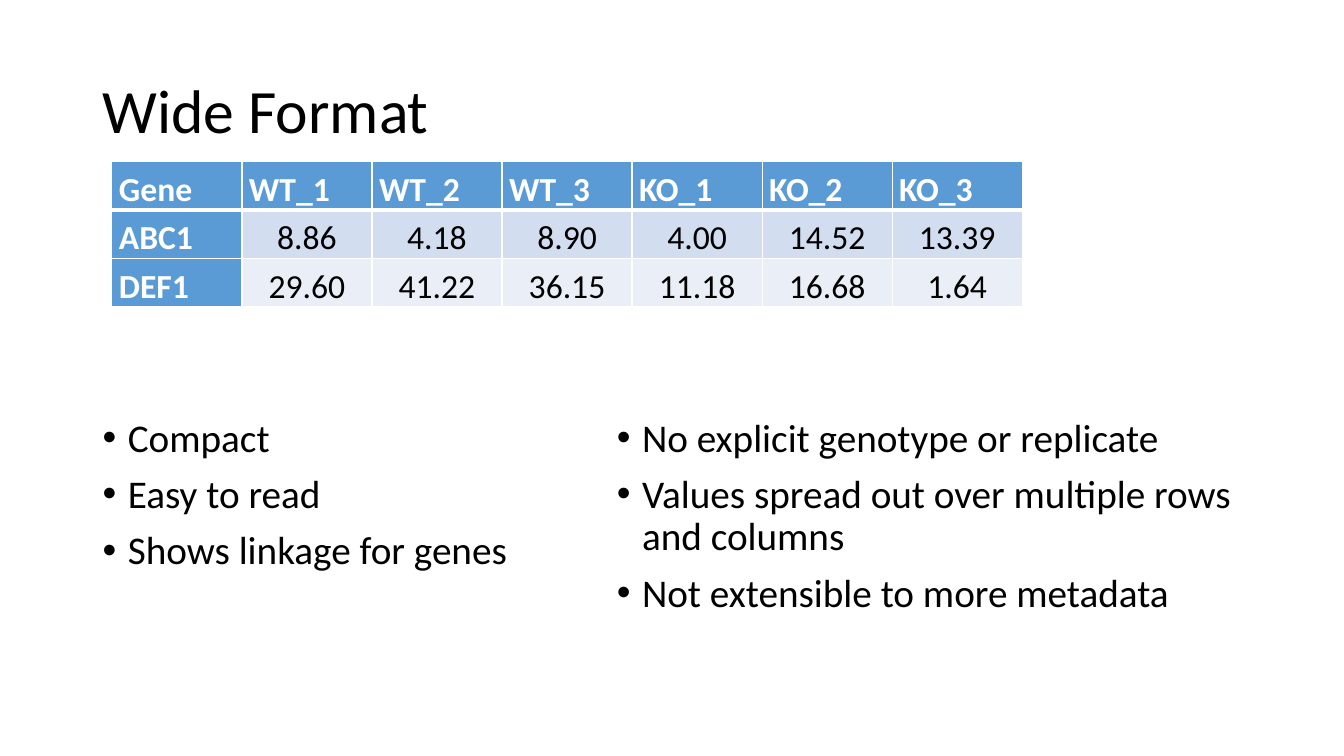
from lxml import etree
from pptx import Presentation
from pptx.dml.color import RGBColor
from pptx.enum.text import MSO_ANCHOR, PP_ALIGN
from pptx.oxml.ns import qn
from pptx.util import Inches, Pt

LEFT, CENTER = PP_ALIGN.LEFT, PP_ALIGN.CENTER
TOP, MIDDLE, BOTTOM = MSO_ANCHOR.TOP, MSO_ANCHOR.MIDDLE, MSO_ANCHOR.BOTTOM

FONT = "Calibri"
BLACK, WHITE = "000000", "FFFFFF"
HEADER_FILL = "5B9BD5"
BAND_FILLS = ["D2DEEF", "EAEFF7"]

EXPRESSION = [
    ["Gene", "WT_1", "WT_2", "WT_3", "KO_1", "KO_2", "KO_3"],
    ["ABC1", "8.86", "4.18", "8.90", "4.00", "14.52", "13.39"],
    ["DEF1", "29.60", "41.22", "36.15", "11.18", "16.68", "1.64"],
]
PROS = ["Compact", "Easy to read", "Shows linkage for genes"]
CONS = [
    "No explicit genotype or replicate",
    "Values spread out over multiple rows and columns",
    "Not extensible to more metadata",
]


def rgb(color):
    return RGBColor.from_string(color)


def set_attrs(obj, values):
    for name, value in values.items():
        setattr(obj, name, value)


def write_paragraph(p, text, size, color=BLACK, bold=False, **layout):
    set_attrs(p, layout)
    r = p.add_run()
    r.text = text
    set_attrs(r.font, {"name": FONT, "size": Pt(size), "bold": bold})
    r.font.color.rgb = rgb(color)


def add_bullet(p):
    pPr = p._p.get_or_add_pPr()
    pPr.set("marL", str(Inches(0.25)))
    pPr.set("indent", str(-Inches(0.25)))
    etree.SubElement(pPr, qn("a:buFont"), typeface="Arial")
    etree.SubElement(pPr, qn("a:buChar"), char="•")


def add_text(s, box, lines, size, anchor=TOP, bullets=False):
    tf = s.shapes.add_textbox(*map(Inches, box)).text_frame
    set_attrs(tf, {"word_wrap": True, "vertical_anchor": anchor})
    for i, line in enumerate(lines):
        p = tf.add_paragraph() if i else tf.paragraphs[0]
        space = Pt(10 if bullets else 0)
        write_paragraph(p, line, size, line_spacing=0.9, space_before=space)
        if bullets:
            add_bullet(p)


def set_borders(cell, widths):
    """Draw white cell edges; widths are points for left, right, top, bottom."""
    tcPr = cell._tc.get_or_add_tcPr()
    for i, (side, width) in enumerate(zip("LRTB", widths)):
        ln = etree.Element(qn("a:ln" + side), w=str(Pt(width)))
        fill = etree.SubElement(ln, qn("a:solidFill"))
        etree.SubElement(fill, qn("a:srgbClr"), val=WHITE)
        tcPr.insert(i, ln)


def add_expression_table(s, left, top, col_width, row_height, rows):
    n_rows, n_cols = len(rows), len(rows[0])
    size = Inches(col_width * n_cols), Inches(row_height * n_rows)
    table = s.shapes.add_table(n_rows, n_cols, Inches(left), Inches(top), *size).table
    for col in table.columns:
        col.width = Inches(col_width)
    for i, row in enumerate(rows):
        table.rows[i].height = Inches(row_height)
        for j, text in enumerate(row):
            cell = table.cell(i, j)
            heading = i == 0 or j == 0
            set_attrs(cell, {
                "margin_left": Inches(0.07), "margin_right": Inches(0.07),
                "margin_top": 0, "margin_bottom": 0, "vertical_anchor": BOTTOM,
            })
            cell.fill.solid()
            cell.fill.fore_color.rgb = rgb(HEADER_FILL if heading else BAND_FILLS[i - 1])
            set_borders(cell, (1, 1, 3 if i == 1 else 1, 3 if i == 0 else 1))
            write_paragraph(
                cell.text_frame.paragraphs[0], text, 24,
                color=WHITE if heading else BLACK, bold=heading,
                alignment=LEFT if heading else CENTER, line_spacing=1.2,
            )


def main():
    prs = Presentation()
    prs.slide_width, prs.slide_height = Inches(13.33), Inches(7.5)
    s = prs.slides.add_slide(prs.slide_layouts[6])

    # Title
    add_text(s, (0.92, 0.4, 11.5, 1.45), ["Wide Format"], 44, anchor=MIDDLE)

    # Advantages and drawbacks
    add_text(s, (0.92, 4.1, 4.78, 1.87), PROS, 28, bullets=True)
    add_text(s, (6.02, 4.1, 6.73, 2.41), CONS, 28, bullets=True)

    # Expression values, one column per sample
    add_expression_table(s, 1.11, 1.6, 1.29, 0.48, EXPRESSION)

    prs.save("out.pptx")


if __name__ == "__main__":
    main()
